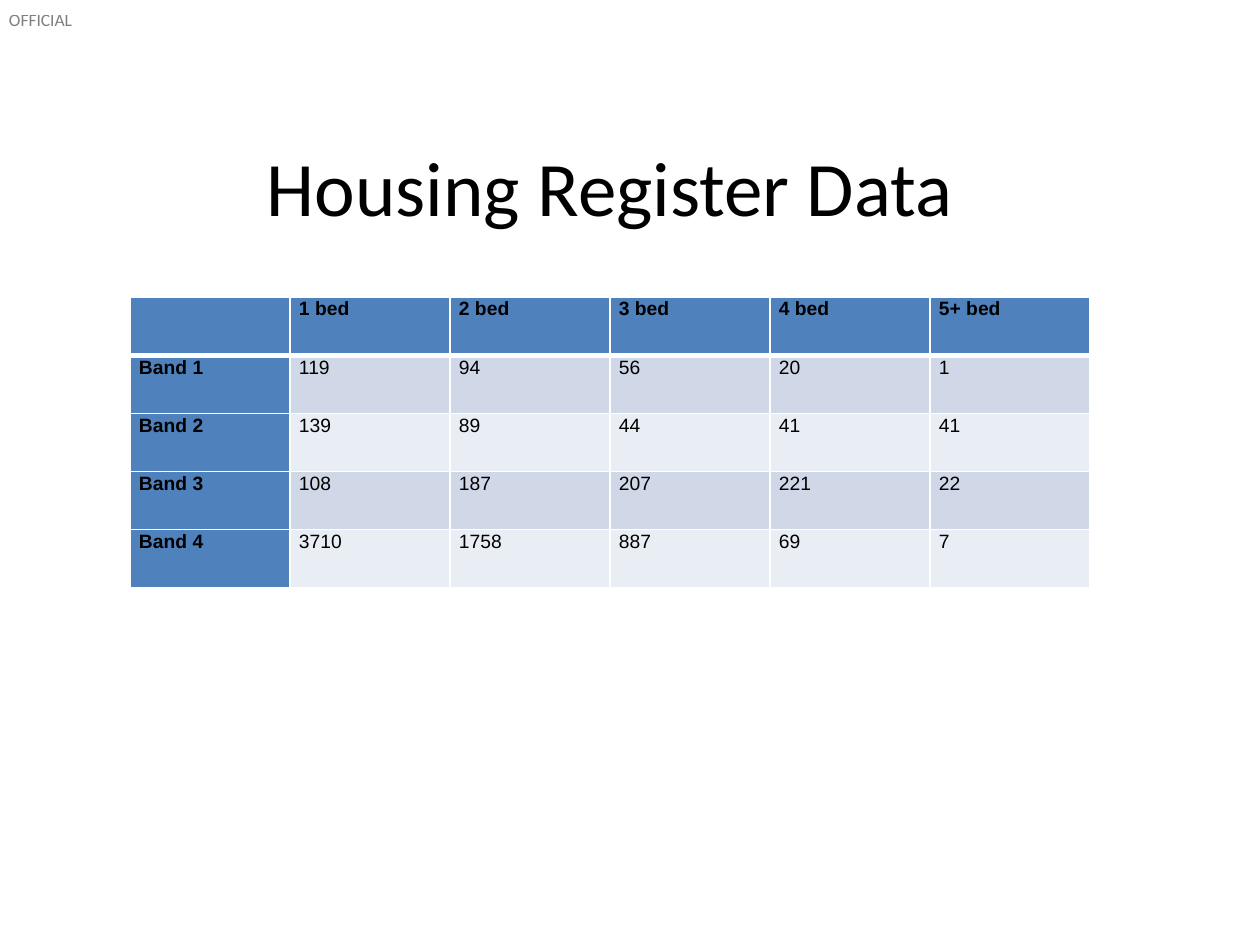
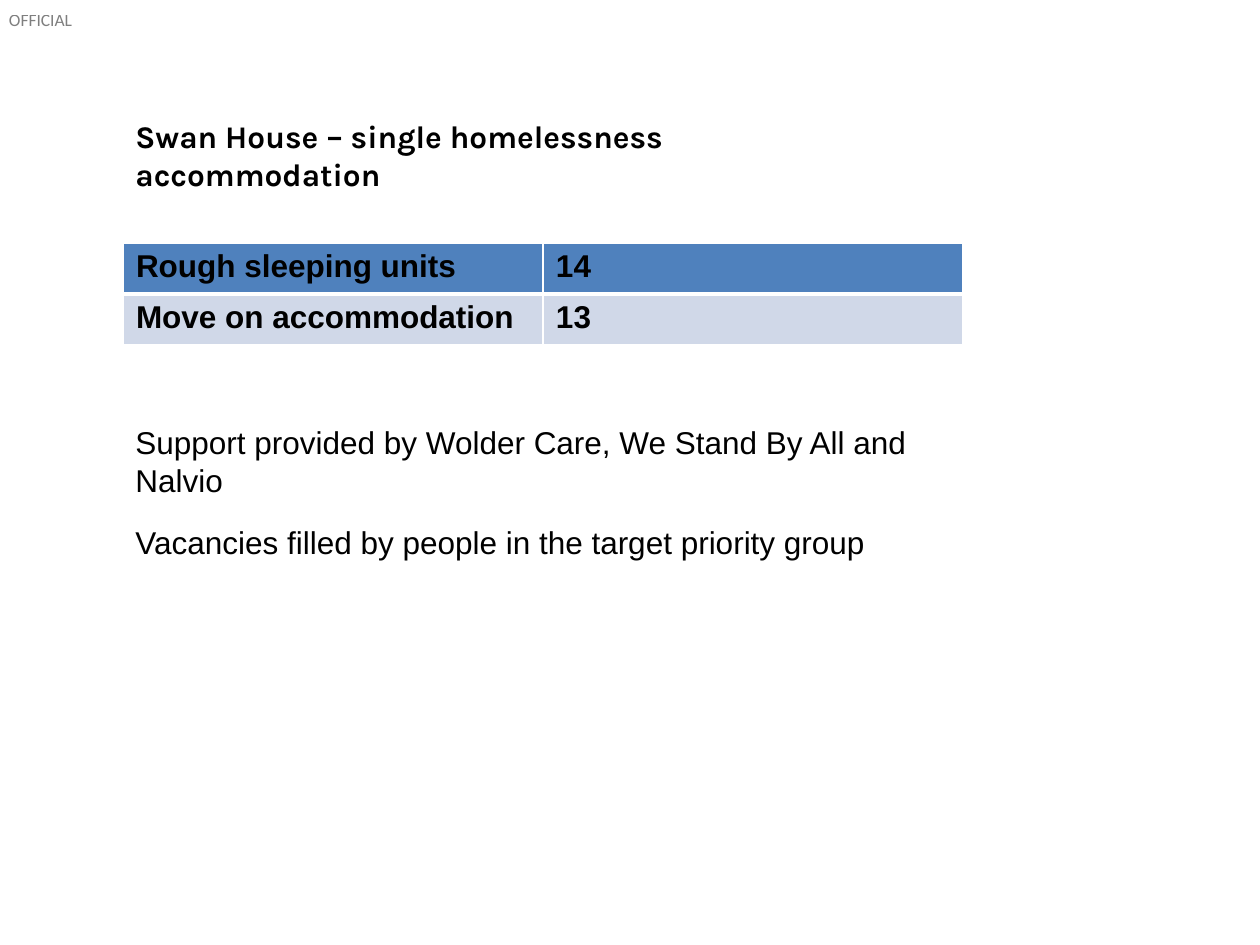
from lxml import etree
from pptx import Presentation
from pptx import util as u
from pptx.dml.color import RGBColor
from pptx.enum import text
from pptx.oxml import ns

PX = 914400 / 126
COLORS = {"ink": "000000", "head": "4F81BD", "odd": "D0D8E8", "even": "E9EDF4", "rule": "FFFFFF"}
BODY = {"name": "Arial", "size": u.Pt(18), "bold": False}
HEADING = {"name": "Karla", "size": u.Pt(18), "bold": True}
TITLE = {"name": "Calibri", "size": u.Pt(44), "bold": False}
MARKING = {"name": "Calibri", "size": u.Pt(10), "bold": False}
REGISTER = [
    ["", "1 bed", "2 bed", "3 bed", "4 bed", "5+ bed"],
    ["Band 1", "119", "94", "56", "20", "1"],
    ["Band 2", "139", "89", "44", "41", "41"],
    ["Band 3", "108", "187", "207", "221", "22"],
    ["Band 4", "3710", "1758", "887", "69", "7"],
]
UNITS = [["Rough sleeping units", "14"], ["Move on accommodation", "13"]]


def px(n):
    """Turn whole px into EMU."""
    return u.Emu(round(n * PX))


def set_all(obj, values):
    """Set each named attribute on an object."""
    for name, value in values.items():
        setattr(obj, name, value)


def style(font, look):
    """Give a font its look in the ink colour."""
    set_all(font, look)
    font.color.rgb = RGBColor.from_string(COLORS["ink"])


def add_text(s, box, words, look, align=text.PP_ALIGN.LEFT, **frame):
    """Add one paragraph of text in a box and return its run."""
    tf = s.shapes.add_textbox(*map(px, box)).text_frame
    set_all(tf, {"word_wrap": True, **frame})
    p = tf.paragraphs[0]
    p.alignment = align
    r = p.add_run()
    r.text = words
    style(r.font, look)
    return r


def add_marking(s):
    """Put the half-transparent marking in the top left corner."""
    r = add_text(s, (9, 9, 67, 21), "OFFICIAL", MARKING, word_wrap=False,
                 margin_left=0, margin_top=0, margin_right=0, margin_bottom=0)
    color = r.font.fill._xPr.find(".//" + ns.qn("a:srgbClr"))
    etree.SubElement(color, ns.qn("a:alpha"), val="50000")


def add_borders(cell, widths):
    """Draw the left, right, top and bottom rules of a cell."""
    tcPr = cell._tc.get_or_add_tcPr()
    for i, (side, width) in enumerate(zip("LRTB", widths)):
        ln = etree.Element(ns.qn("a:ln" + side), w=str(u.Pt(width)))
        fill = etree.SubElement(ln, ns.qn("a:solidFill"))
        etree.SubElement(fill, ns.qn("a:srgbClr"), val=COLORS["rule"])
        tcPr.insert(i, ln)


def add_grid(s, box, rows, size, margins, spacing, is_bold, side_heads=False):
    """Add a banded table with equal columns and rows in a box."""
    table = s.shapes.add_table(len(rows), len(rows[0]), *map(px, box)).table
    for col in table.columns:
        col.width = px(box[2] / len(rows[0]))
    for i, row in enumerate(rows):
        table.rows[i].height = px(box[3] / len(rows))
        for j, words in enumerate(row):
            cell = table.cell(i, j)
            head = i == 0 or (side_heads and j == 0)
            band = "head" if head else "odd" if i % 2 else "even"
            cell.fill.solid()
            cell.fill.fore_color.rgb = RGBColor.from_string(COLORS[band])
            add_borders(cell, (1, 1, 3 if i == 1 else 1, 3 if i == 0 else 1))
            set_all(cell, {"margin_" + k: px(margins[k in ("top", "bottom")])
                           for k in ("left", "top", "right", "bottom")})
            p = cell.text_frame.paragraphs[0]
            set_all(p, spacing)
            look = {**BODY, "size": u.Pt(size), "bold": head or is_bold}
            style(p.font, look)
            if words:
                r = p.add_run()
                r.text = words
                style(r.font, look)


def register_slide(s):
    """Fill the slide with housing register figures."""
    add_marking(s)
    add_text(s, (149, 84, 922, 203), "Housing Register Data", TITLE, text.PP_ALIGN.CENTER,
             vertical_anchor=text.MSO_ANCHOR.MIDDLE)
    add_grid(s, (130, 297, 960, 291), REGISTER, 11, (9, 0),
             {"line_spacing": 1.07, "space_after": u.Pt(8)}, False, side_heads=True)


def accommodation_slide(s):
    """Fill the slide on single homelessness accommodation."""
    add_marking(s)
    add_text(s, (123, 111, 631, 89), "Swan House – single homelessness accommodation", HEADING)
    add_grid(s, (123, 243, 840, 102), UNITS, 18, (13, 6), {}, True)
    add_text(s, (123, 417, 856, 89),
             "Support provided by Wolder Care, We Stand By All and Nalvio", BODY)
    add_text(s, (123, 517, 840, 165),
             "Vacancies filled by people in the target priority group", BODY)


def main():
    """Build and save the presentation."""
    prs = Presentation()
    prs.slide_width, prs.slide_height = px(1260), px(945)
    for fill_slide in (register_slide, accommodation_slide):
        fill_slide(prs.slides.add_slide(prs.slide_layouts[6]))
    prs.save("out.pptx")


if __name__ == "__main__":
    main()
